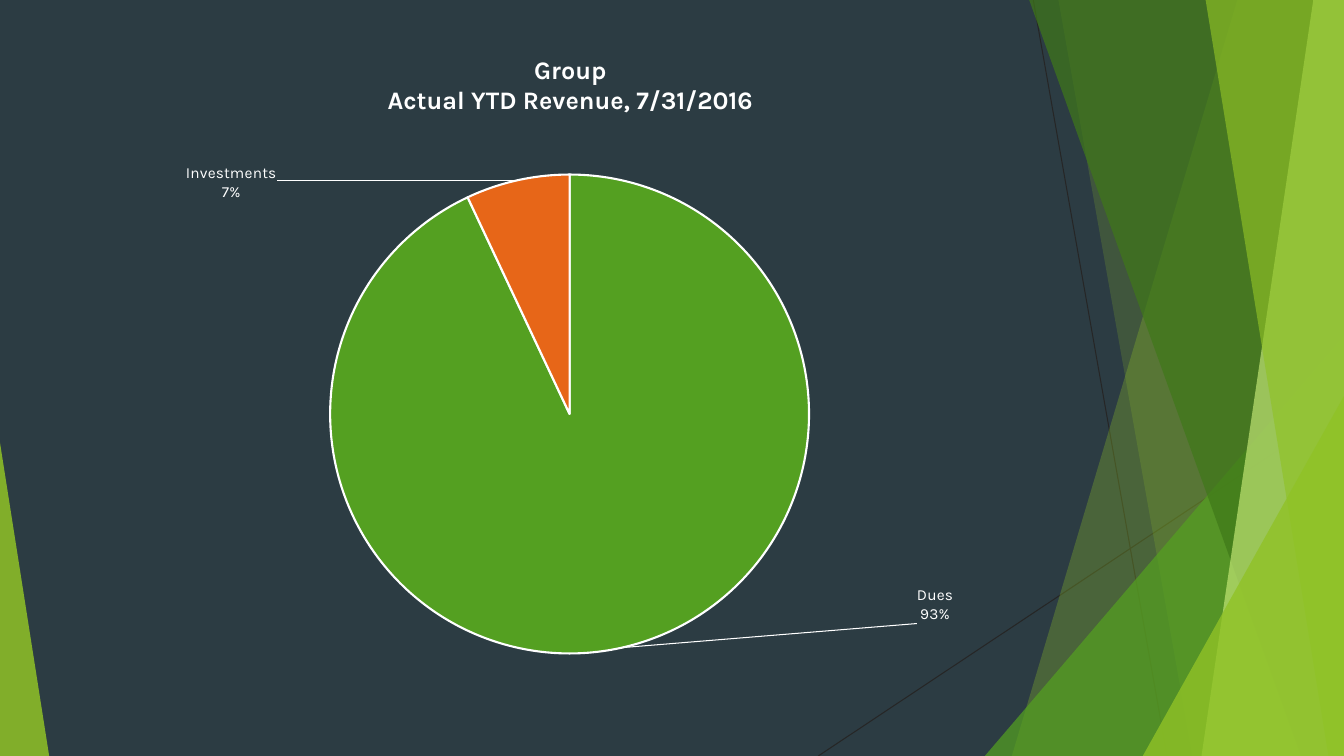
from pptx import Presentation
from pptx.chart.data import CategoryChartData as Data
from pptx.dml.color import RGBColor as RGB
from pptx.enum.chart import XL_CHART_TYPE as Kind, XL_LABEL_POSITION as Pos
from pptx.enum.shapes import MSO_CONNECTOR as Link, MSO_SHAPE as Shape
from pptx.oxml import parse_xml as make
from pptx.oxml.ns import nsdecls, qn
from pptx.util import Cm, Pt


def paint(fill, tone, alpha=100):
    fill.solid()
    fill.fore_color.rgb = RGB.from_string(tone)
    if alpha < 100:
        node = fill._xPr.find(qn("a:solidFill"))[0]
        node.append(make(f'<a:alpha {nsdecls("a")} val="{alpha * 1000}"/>'))


def place(node, index, **parts):
    for old in node.findall(qn("c:layout")):
        node.remove(old)
    tags = "".join(f'<c:{key} val="{val}"/>' for key, val in parts.items())
    node.insert(index, make(
        f'<c:layout {nsdecls("c")}><c:manualLayout>{tags}</c:manualLayout></c:layout>'))


deck = Presentation()
deck.slide_width, deck.slide_height = wide, high = Cm(33.87), Cm(19.05)
slide = deck.slides.add_slide(deck.slide_layouts[6])
paint(slide.background.fill, "2C3C43")
shapes = slide.shapes

for ends in [(26.04, 0, 29.41, 19.05), (33.87, 10.24, 20.62, 19.05)]:
    line = shapes.add_connector(Link.STRAIGHT, *map(Cm, ends))
    paint(line.line.fill, "262626")
    line.line.width = Pt(0.75)
    line._element.spPr.append(make(f'<a:effectLst {nsdecls("a")}/>'))

facets = [
    ((31.19, 25.5), "90C226", 30),
    ((26.67, 30.05), "90C226", 20),
    ((24.82, 8.46, 9.05, 10.59, 1), "54A021", 72),
    ((25.93, 32.79), "3F7819", 70),
    ((33.1, 30.28), "C0E474", 70),
    ((30.38, 33.48), "90C226", 65),
    ((28.8, 9.98, 5.07, 9.07, 1), "90C226", 80),
    ((0, 11.15, 1.24, 7.9, 0), "90C226", 85),
]
for spot, tone, alpha in facets:
    if len(spot) == 2:
        top, base = map(Cm, spot)
        pen = shapes.build_freeform(top, Cm(-0.02))
        pen.add_line_segments([(wide, Cm(-0.02)), (wide, high), (base, high)])
        facet = pen.convert_to_shape()
    else:
        facet = shapes.add_shape(Shape.ISOSCELES_TRIANGLE, *map(Cm, spot[:4]))
        facet.adjustments[0] = spot[4]
    facet.shadow.inherit = False
    facet.line.fill.background()
    paint(facet.fill, tone, alpha)

data = Data()
data.categories = ["Dues", "Investments"]
data.add_series("Series 1", [93, 7])
chart = shapes.add_chart(
    Kind.PIE, Cm(0.64), Cm(0.79), Cm(27.43), Cm(17.07), data).chart
chart.has_legend = False
chart.has_title = True
title = chart.chart_title
title.text_frame.text = "Group\nActual YTD Revenue, 7/31/2016"
place(title._element, 1, xMode="edge", yMode="edge", x=0.33, y=0.03)
place(chart._chartSpace.chart.plotArea, 0, layoutTarget="inner",
      xMode="edge", yMode="edge", x=0.28, y=0.21, w=0.44, h=0.71)

plot = chart.plots[0]
plot.vary_by_categories = True
pie = plot.series[0]
labels = pie.data_labels
looks = {"show_category_name": True, "show_percentage": True, "show_value": False,
         "number_format": "0%", "number_format_is_linked": False,
         "position": Pos.OUTSIDE_END}
for key, val in looks.items():
    setattr(labels, key, val)
labels._element.append(make(
    f'<c:leaderLines {nsdecls("c", "a")}><c:spPr><a:ln w="9525"><a:solidFill>'
    '<a:srgbClr val="FFFFFF"/></a:solidFill></a:ln></c:spPr></c:leaderLines>'))

fonts = [(chart.font, 10, False), (labels.font, 11, False)]
fonts += [(par.runs[0].font, 18, True) for par in title.text_frame.paragraphs]
shows = {"LegendKey": 0, "Val": 0, "CatName": 1, "SerName": 0,
         "Percent": 1, "BubbleSize": 0}
flags = "".join(f'<c:show{key} val="{val}"/>' for key, val in shows.items())
slices = [("54A021", 0.27, -0.1), ("E76618", -0.22, 0.04)]
for num, (tone, left, down) in enumerate(slices):
    point = pie.points[num]
    paint(point.format.fill, tone)
    paint(point.format.line.fill, "FFFFFF")
    point.format.line.width = Pt(1.5)
    label = make(
        f'<c:dLbl {nsdecls("c")}><c:idx val="{num}"/>'
        '<c:numFmt formatCode="0%" sourceLinked="0"/><c:dLblPos val="outEnd"/>'
        f'{flags}<c:separator>\n</c:separator></c:dLbl>')
    place(label, 1, x=left, y=down)
    labels._element.insert(num, label)
    fonts.append((point.data_label.font, 11, False))

for font, size, bold in fonts:
    for key, val in {"name": "Karla", "size": Pt(size), "bold": bold}.items():
        setattr(font, key, val)
    paint(font.fill, "FFFFFF")

deck.save("out.pptx")
